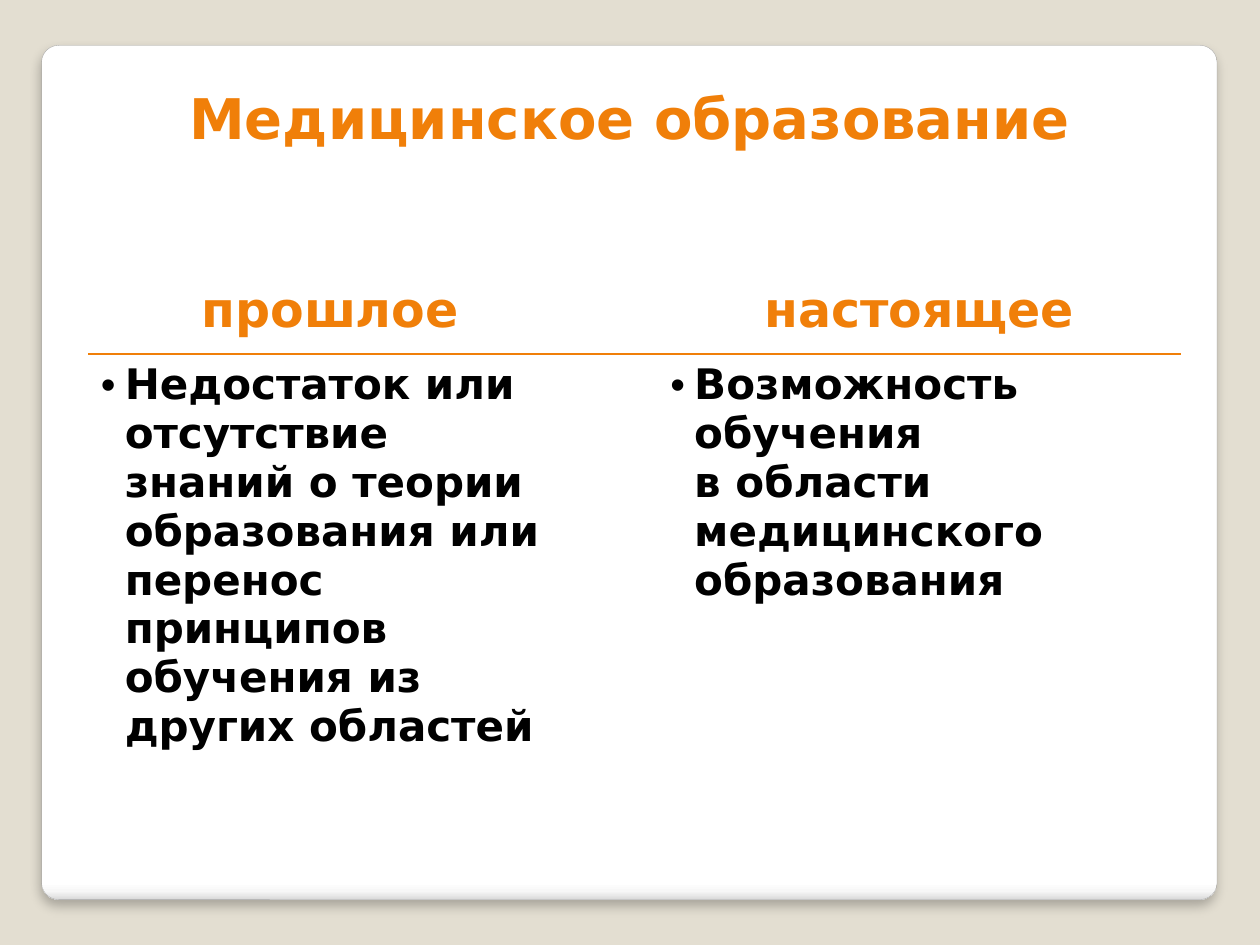
from dataclasses import dataclass

from lxml import etree
from pptx import Presentation
from pptx.dml.color import RGBColor
from pptx.enum import shapes, text
from pptx.oxml import ns
from pptx.util import Inches, Pt


@dataclass(frozen=True)
class Theme:
    font: str = "DejaVu Sans"
    background: str = "E3DED1"
    accent: str = "F07F09"
    body: str = "000000"
    outline: str = "A4A4A4"
    title_size: int = 32
    heading_size: int = 28
    body_size: int = 24


THEME = Theme()
PLAIN_TABLE_STYLE = "{2D5ABB26-0587-4C30-8999-92F81FD0307C}"
PANEL_STOPS = [(0, "FFFFFF"), (98, "FFFFFF"), (99, "F7F7F7"), (100, "DADADA")]
COLUMNS = [
    ("прошлое", "Недостаток или отсутствие знаний о теории образования "
                "или перенос принципов обучения из других областей"),
    ("", ""),
    ("настоящее", "Возможность обучения \nв области медицинского образования"),
]


def add_xml(parent, tag, **attributes):
    values = {name: str(value) for name, value in attributes.items()}
    return etree.SubElement(parent, ns.qn(tag), values)


def add_color(parent, color):
    return add_xml(parent, "a:srgbClr", val=color)


def format_paragraph(paragraph, size, color, alignment):
    paragraph.alignment = alignment
    values = {"name": THEME.font, "size": Pt(size), "bold": True}
    for run in paragraph.runs:
        for name, value in values.items():
            setattr(run.font, name, value)
        run.font.color.rgb = RGBColor.from_string(color)


def add_panel(slide, left, top, width, height):
    panel = slide.shapes.add_shape(
        shapes.MSO_SHAPE.ROUNDED_RECTANGLE, left, top, width, height)
    panel.adjustments[0] = 0.02
    panel.fill.gradient()
    panel.line.color.rgb = RGBColor.from_string(THEME.outline)
    panel.line.width = Pt(0.16)

    gradient = panel.element.spPr.find(ns.qn("a:gradFill"))
    for child in list(gradient):
        gradient.remove(child)
    stops = add_xml(gradient, "a:gsLst")
    for position, color in PANEL_STOPS:
        add_color(add_xml(stops, "a:gs", pos=position * 1000), color)
    add_xml(gradient, "a:lin", ang=90 * 60000, scaled=0)

    panel.shadow.inherit = False
    effects = panel.element.spPr.find(ns.qn("a:effectLst"))
    shadow = add_xml(effects, "a:outerShdw", blurRad=Pt(6), dist=Pt(4),
                     dir=90 * 60000, algn="t", rotWithShape=0)
    add_xml(add_color(shadow, "000000"), "a:alpha", val=25000)


def place_title(slide, left, top, width, height, wording):
    title = slide.shapes.title
    for name, value in dict(left=left, top=top, width=width, height=height).items():
        setattr(title, name, value)
    frame = title.text_frame
    frame.text = wording
    frame.vertical_anchor = text.MSO_ANCHOR.BOTTOM
    format_paragraph(frame.paragraphs[0], THEME.title_size, THEME.accent,
                     text.PP_ALIGN.CENTER)


def add_bullet(paragraph):
    properties = paragraph._p.get_or_add_pPr()
    properties.set("marL", str(Inches(0.19)))
    properties.set("indent", str(-Inches(0.19)))
    add_xml(properties, "a:buFont", typeface="Arial")
    add_xml(properties, "a:buChar", char="•")


def add_border(cell, side):
    properties = cell._tc.get_or_add_tcPr()
    border = add_xml(properties, side, w=Pt(1))
    add_color(add_xml(border, "a:solidFill"), THEME.accent)
    properties.insert(0, border)


def fill_cell(cell, wording, is_heading):
    cell.fill.background()
    add_border(cell, "a:lnB" if is_heading else "a:lnT")
    if not wording:
        return
    paragraph = cell.text_frame.paragraphs[0]
    paragraph.text = wording
    if is_heading:
        format_paragraph(paragraph, THEME.heading_size, THEME.accent,
                         text.PP_ALIGN.CENTER)
    else:
        format_paragraph(paragraph, THEME.body_size, THEME.body,
                         text.PP_ALIGN.LEFT)
        add_bullet(paragraph)


def add_comparison(slide, left, top, width, height):
    frame = slide.shapes.add_table(2, len(COLUMNS), left, top, width, height)
    table = frame.table
    table.first_row = table.horz_banding = False
    table._tbl.tblPr.find(ns.qn("a:tableStyleId")).text = PLAIN_TABLE_STYLE
    first, gap = Inches(3.84), Inches(0.68)
    for column, size in zip(table.columns, (first, gap, width - first - gap)):
        column.width = size
    heading_height = Inches(0.62)
    for row, size in zip(table.rows, (heading_height, height - heading_height)):
        row.height = size
    for column_index, wordings in enumerate(COLUMNS):
        for row_index, wording in enumerate(wordings):
            fill_cell(table.cell(row_index, column_index), wording, row_index == 0)


def main():
    presentation = Presentation()
    presentation.slide_width = Inches(10)
    presentation.slide_height = Inches(7.5)
    slide = presentation.slides.add_slide(presentation.slide_layouts[5])
    slide.background.fill.solid()
    slide.background.fill.fore_color.rgb = RGBColor.from_string(THEME.background)

    add_panel(slide, Inches(0.33), Inches(0.36), Inches(9.33), Inches(6.78))
    add_comparison(slide, Inches(0.7), Inches(2.19), Inches(8.67), Inches(4.26))
    place_title(slide, Inches(0), Inches(0.3), presentation.slide_width,
                Inches(0.95), "Медицинское образование")
    slide.shapes._spTree.append(slide.shapes.title.element)
    presentation.save("out.pptx")


if __name__ == "__main__":
    main()
